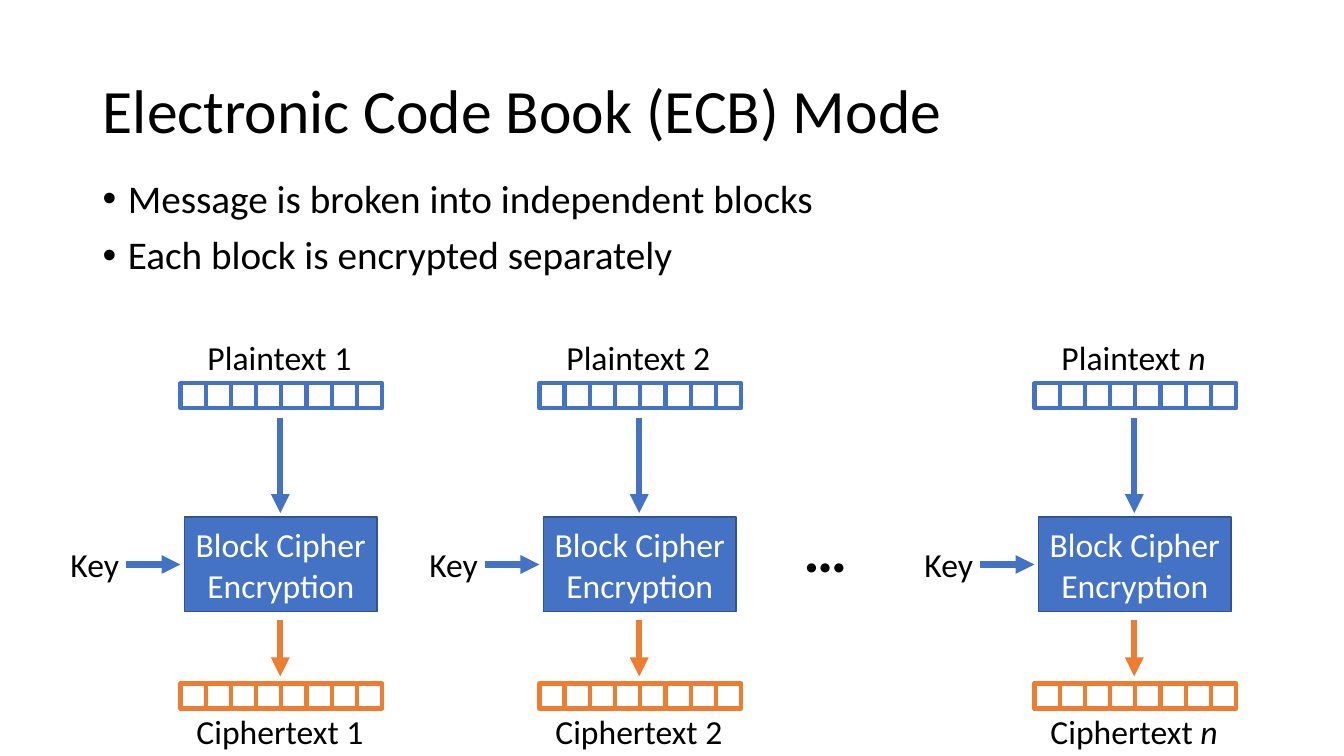
from lxml import etree
from pptx import Presentation
from pptx.dml.color import RGBColor
from pptx.enum.shapes import MSO_CONNECTOR, MSO_SHAPE
from pptx.enum.text import MSO_ANCHOR, MSO_AUTO_SIZE, PP_ALIGN
from pptx.oxml.ns import qn
from pptx.util import Pt

RECT = MSO_SHAPE.RECTANGLE
LINE = MSO_CONNECTOR.STRAIGHT
MIDDLE = MSO_ANCHOR.MIDDLE
LEFT, CENTER = PP_ALIGN.LEFT, PP_ALIGN.CENTER
FIT, FIXED = MSO_AUTO_SIZE.SHAPE_TO_FIT_TEXT, MSO_AUTO_SIZE.NONE

SCALE = 9144  # 100 px to the inch
FONT = "Calibri"
COLORS = {"ink": "000000", "paper": "FFFFFF", "blue": "4472C4",
          "edge": "325491", "orange": "ED7D31"}
CELL, CELLS = 25, 8
LANES = [(278, "1", False), (634, "2", False), (1125, "n", True)]


def px(*sizes):
    return [size * SCALE for size in sizes]


def rgb(name):
    return RGBColor.from_string(COLORS[name])


class Sketch:
    def __init__(self, deck):
        self.slide = deck.slides.add_slide(deck.slide_layouts[5])
        self.shapes = self.slide.shapes

    def style(self, para, size, color="ink", align=LEFT):
        para.alignment = align
        para.font.name = FONT
        para.font.size = Pt(size)
        para.font.color.rgb = rgb(color)

    def title(self, text, *box):
        head = self.shapes.title
        head.left, head.top, head.width, head.height = px(*box)
        frame = head.text_frame
        frame.text = text
        frame.auto_size = FIXED
        frame.vertical_anchor = MIDDLE
        para = frame.paragraphs[0]
        para.line_spacing = 0.9
        self.style(para, 44)

    def list(self, items, *box):
        frame = self.shapes.add_textbox(*px(*box)).text_frame
        frame.word_wrap = True
        frame.text = "\n".join(items)
        for para in frame.paragraphs:
            self.style(para, 28)
            para.line_spacing = 0.9
            para.space_before = Pt(10)
            props = para._p.get_or_add_pPr()
            props.set("marL", str(CELL * SCALE))
            props.set("indent", str(-CELL * SCALE))
            etree.SubElement(props, qn("a:buFont"), typeface="Arial")
            etree.SubElement(props, qn("a:buChar"), char="•")

    def label(self, text, *box, size=24, bold=False, tail="", slant=False):
        """Put text on one line, with a tail that may be italic."""
        frame = self.shapes.add_textbox(*px(*box)).text_frame
        frame.word_wrap = False
        frame.auto_size = FIT
        para = frame.paragraphs[0]
        self.style(para, size)
        para.font.bold = bold
        para.add_run().text = text
        if tail:
            run = para.add_run()
            run.text = tail
            run.font.italic = slant

    def rect(self, home, box, fill, line, width):
        shape = home.add_shape(RECT, *px(*box))
        shape.shadow.inherit = False
        shape.fill.solid()
        shape.fill.fore_color.rgb = rgb(fill)
        shape.line.color.rgb = rgb(line)
        shape.line.width = Pt(width)
        return shape

    def strip(self, left, top, color):
        group = self.shapes.add_group_shape().shapes
        for i in range(CELLS):
            box = (left + i * CELL, top, CELL, CELL)
            self.rect(group, box, "paper", color, 3)

    def block(self, text, *box):
        shape = self.rect(self.shapes, box, "blue", "edge", 1)
        frame = shape.text_frame
        frame.word_wrap = True
        frame.vertical_anchor = MIDDLE
        frame.text = text
        self.style(frame.paragraphs[0], 24, "paper", CENTER)

    def arrow(self, color, *ends):
        link = self.shapes.add_connector(LINE, *px(*ends))
        link.line.color.rgb = rgb(color)
        link.line.width = Pt(4.5)
        etree.SubElement(link.line._get_or_add_ln(), qn("a:tailEnd"),
                         type="triangle")
        etree.SubElement(link._element.spPr, qn("a:effectLst"))

    def lane(self, mid, tag, slant):
        """Draw one block's way from plaintext to ciphertext."""
        left = mid - 99
        self.strip(left, 380, "blue")
        self.label("Plaintext ", mid - 82, 329, 164, 50, tail=tag, slant=slant)
        self.arrow("blue", mid, 415, mid, 509)
        self.block("Block Cipher Encryption", mid - 95, 513, 191, 94)
        self.strip(left, 678, "orange")
        self.arrow("orange", mid, 615, mid, 671)
        self.label("Key", mid - 218, 535, 69, 50)
        self.arrow("blue", mid - 153, 560, left, 560)
        self.label("Ciphertext ", mid - 93, 700, 187, 50, tail=tag, slant=slant)


def main():
    deck = Presentation()
    deck.slide_width, deck.slide_height = px(1333, 750)
    sketch = Sketch(deck)
    sketch.title("Electronic Code Book (ECB) Mode", 92, 40, 1150, 145)
    sketch.list(["Message is broken into independent blocks",
                 "Each block is encrypted separately"], 92, 173, 1150, 125)
    for lane in LANES:
        sketch.lane(*lane)
    sketch.label("…", 787, 502, 64, 84, size=44, bold=True)
    deck.save("out.pptx")


if __name__ == "__main__":
    main()
